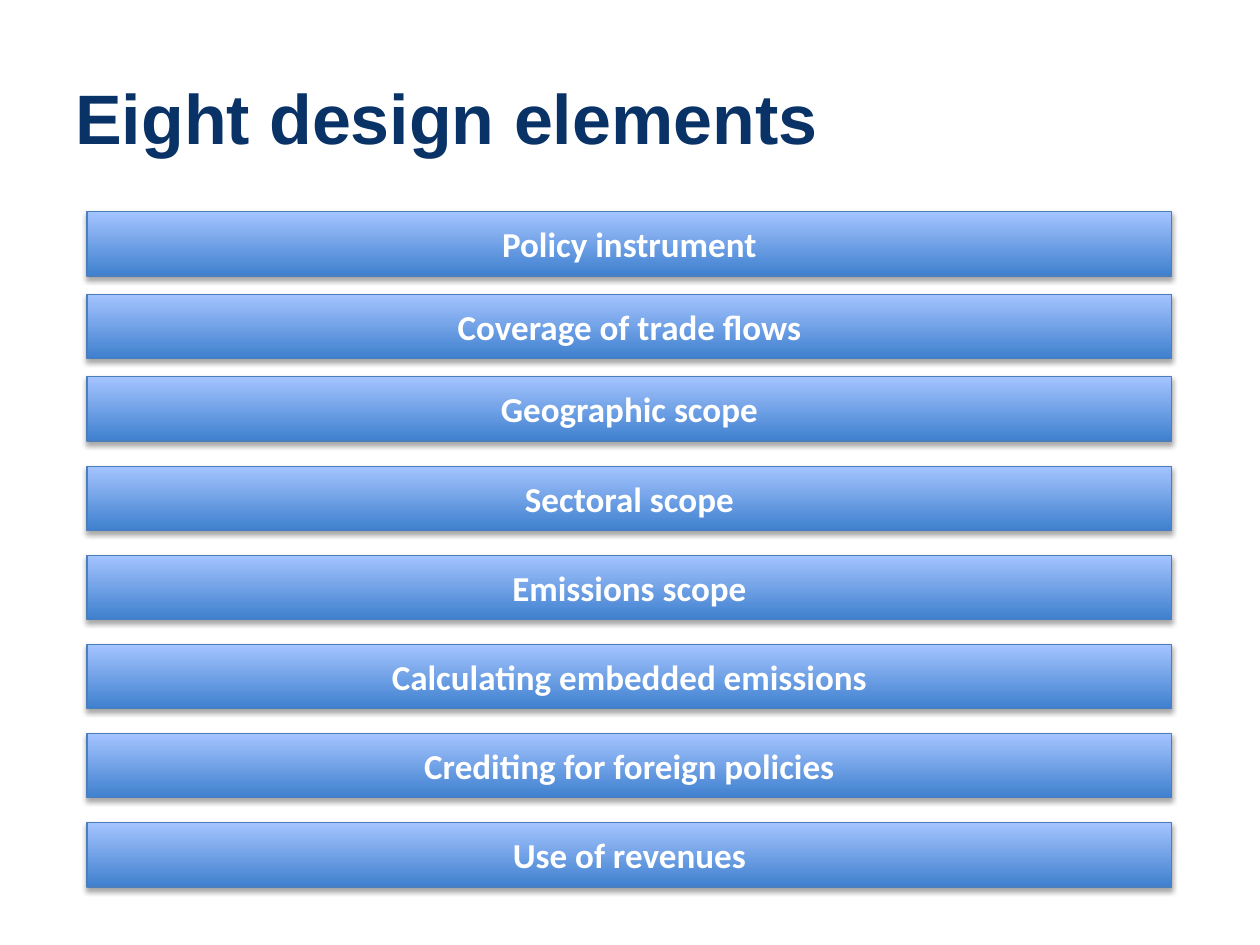
from dataclasses import dataclass

from lxml import etree
from pptx import Presentation
from pptx.dml.color import RGBColor
from pptx.enum.shapes import MSO_SHAPE
from pptx.enum.text import MSO_ANCHOR, PP_ALIGN
from pptx.oxml.ns import qn
from pptx.util import Inches, Pt

RECTANGLE = MSO_SHAPE.RECTANGLE
MIDDLE = MSO_ANCHOR.MIDDLE
LEFT, CENTER = PP_ALIGN.LEFT, PP_ALIGN.CENTER


@dataclass(frozen=True)
class Theme:
    """Colours, fonts and type sizes of the slide."""
    title_color: str = "093266"
    bar_bottom: str = "3F80CE"
    bar_top: str = "A4C4FF"
    bar_edge: str = "4B7EBC"
    bar_text: str = "FFFFFF"
    shadow: str = "000000"
    title_font: str = "Arial"
    bar_font: str = "Calibri"
    title_size: int = 40
    bar_size: int = 20


THEME = Theme()
TITLE = "Eight design elements"
TRADE_ELEMENTS = ["Policy instrument", "Coverage of trade flows", "Geographic scope"]
EMISSION_ELEMENTS = ["Sectoral scope", "Emissions scope", "Calculating embedded emissions",
                     "Crediting for foreign policies", "Use of revenues"]


def write_text(holder, text, *, font, size, color, align=LEFT):
    """Write one bold, vertically centred line into a shape."""
    frame = holder.text_frame
    frame.word_wrap = True
    frame.vertical_anchor = MIDDLE
    paragraph = frame.paragraphs[0]
    paragraph.alignment = align
    run = paragraph.add_run()
    run.text = text
    run.font.name = font
    run.font.size = Pt(size)
    run.font.bold = True
    run.font.color.rgb = RGBColor.from_string(color)


def add_shadow(bar):
    """Give a bar a soft shadow straight below it."""
    bar.shadow.inherit = False
    effects = bar._element.spPr.find(qn("a:effectLst"))
    shadow = etree.SubElement(effects, qn("a:outerShdw"), blurRad=str(Pt(3.1)),
                              dist=str(Pt(1.8)), dir="5400000", rotWithShape="0")
    color = etree.SubElement(shadow, qn("a:srgbClr"), val=THEME.shadow)
    etree.SubElement(color, qn("a:alpha"), val="35000")


def add_title(slide, left, top, width, height):
    """Place the slide title in the given box."""
    title = slide.shapes.add_textbox(left, top, width, height)
    write_text(title, TITLE, font=THEME.title_font, size=THEME.title_size,
               color=THEME.title_color)


def add_bar(slide, label, left, top, width, height):
    """Place one labelled gradient bar in the given box."""
    bar = slide.shapes.add_shape(RECTANGLE, left, top, width, height)
    bar.fill.gradient()
    bar.fill.gradient_angle = 90
    for stop, color in zip(bar.fill.gradient_stops, (THEME.bar_bottom, THEME.bar_top)):
        stop.color.rgb = RGBColor.from_string(color)
    bar.line.color.rgb = RGBColor.from_string(THEME.bar_edge)
    bar.line.width = Pt(0.75)
    add_shadow(bar)
    write_text(bar, label, font=THEME.bar_font, size=THEME.bar_size,
               color=THEME.bar_text, align=CENTER)


def add_bar_stack(slide, labels, left, top, width, height, bar_height):
    """Spread bars evenly from the top to the bottom of the given box."""
    pitch = (height - bar_height) / (len(labels) - 1)
    for row, label in enumerate(labels):
        add_bar(slide, label, left, top + round(row * pitch), width, bar_height)


def main():
    """Build and save the slide."""
    presentation = Presentation()
    presentation.slide_width, presentation.slide_height = Inches(10), Inches(7.5)
    slide = presentation.slides.add_slide(presentation.slide_layouts[6])
    add_title(slide, Inches(0.5), Inches(0.3), Inches(7.83), Inches(1.25))
    left, width, bar_height = Inches(0.69), Inches(8.61), Inches(0.51)
    add_bar_stack(slide, TRADE_ELEMENTS, left, Inches(1.68), width, Inches(1.82), bar_height)
    add_bar_stack(slide, EMISSION_ELEMENTS, left, Inches(3.7), width, Inches(3.34), bar_height)
    presentation.save("out.pptx")


if __name__ == "__main__":
    main()
